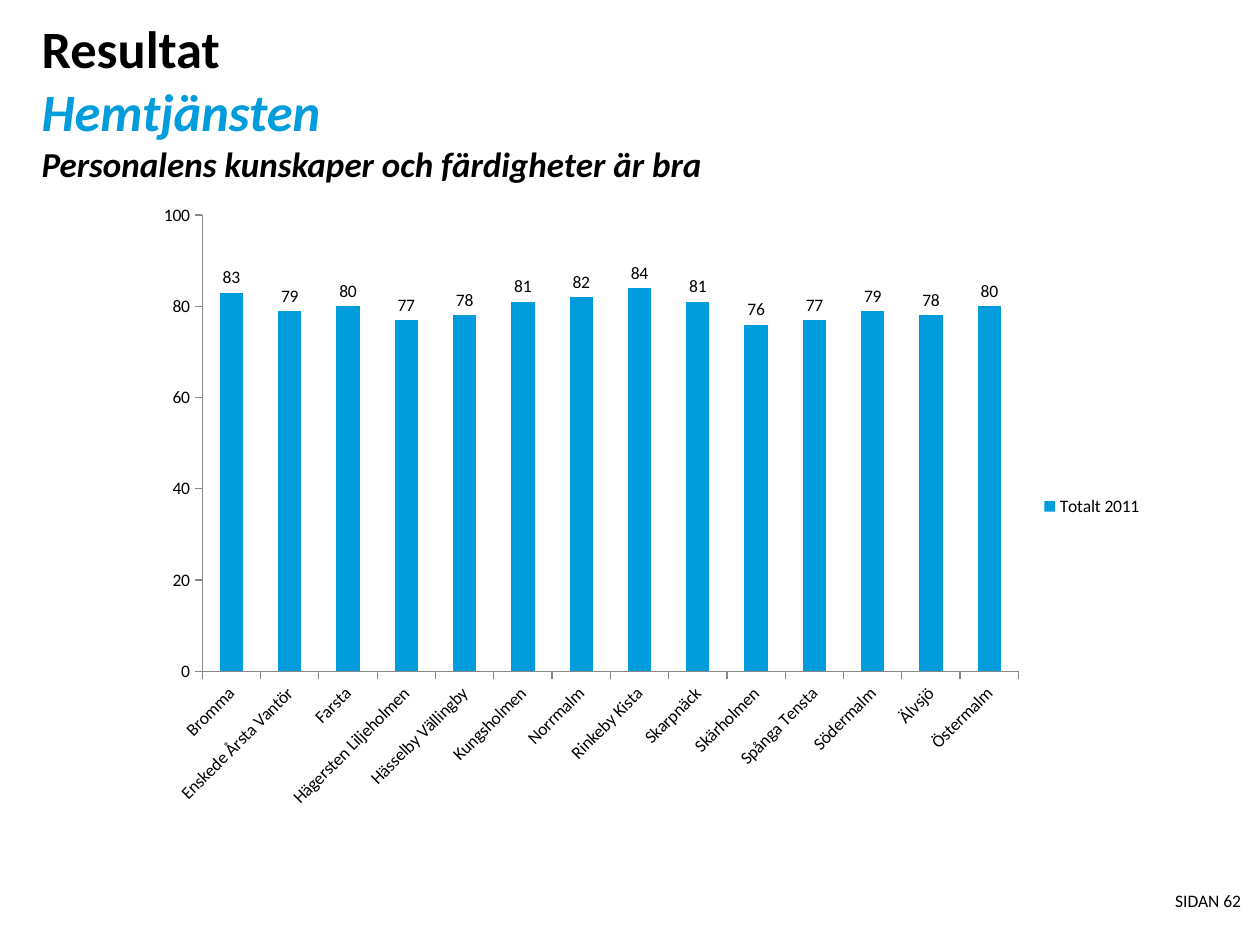
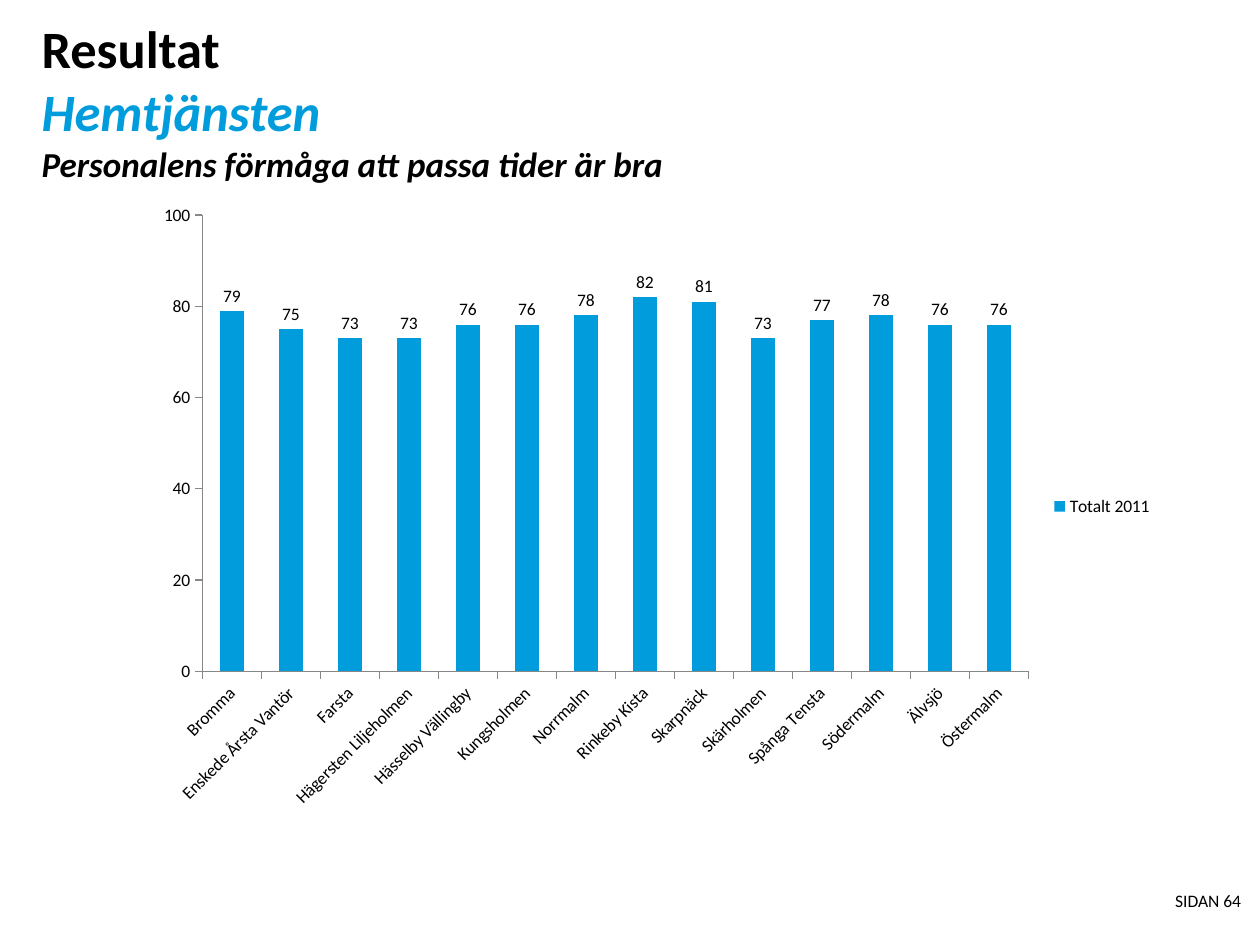
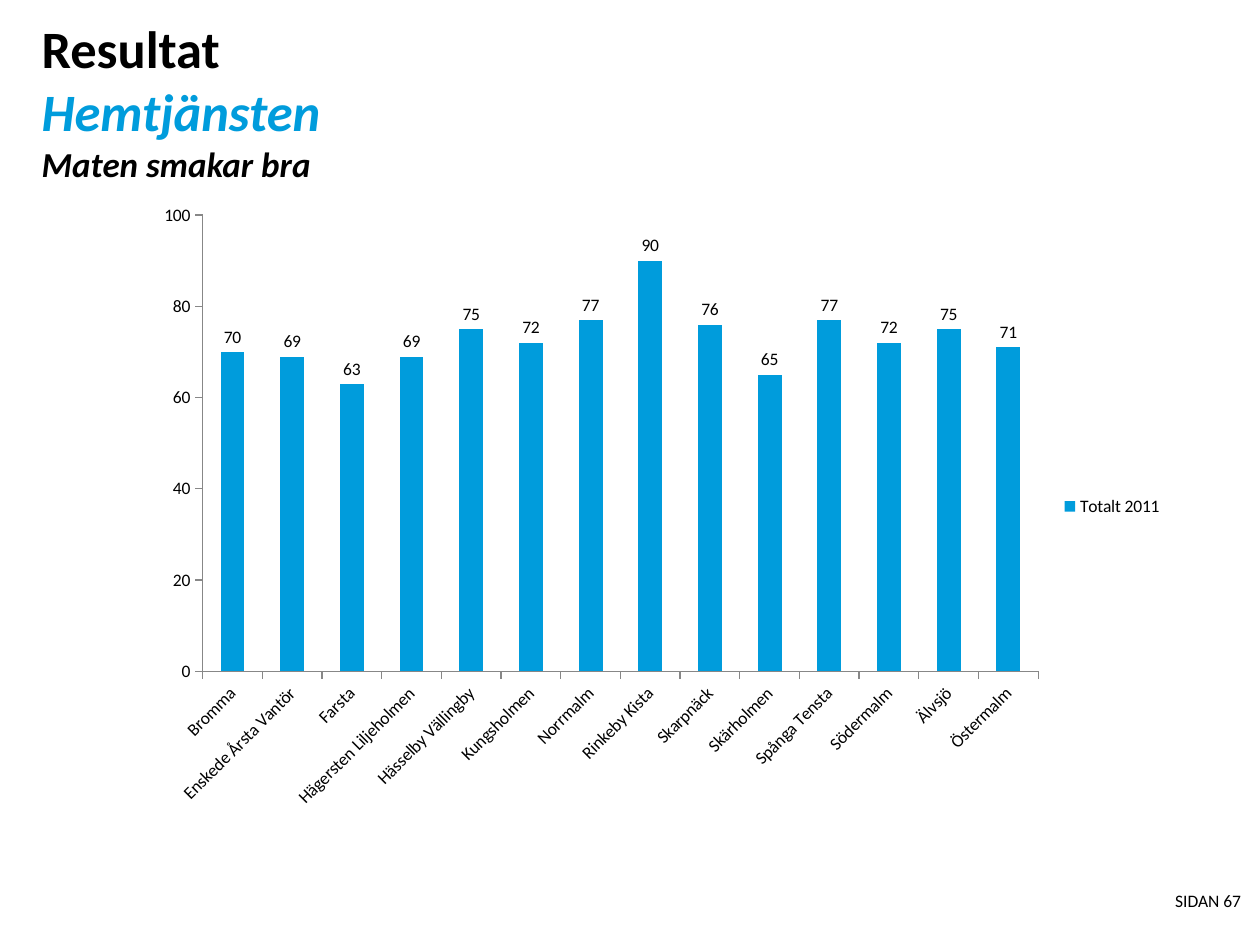
import pptx
import pptx.util
import pptx.chart.data
import pptx.dml.color
import pptx.enum.chart
import pptx.enum.text

WIDE, HIGH = 10, 7.5
FONT = "Calibri"
BLACK, BLUE, GREY = "000000", "009CDC", "878787"

# Boxes as shares of the slide: left, top, width, height
HEAD = (0.033, 0.0173, 0.925, 0.1253)
FOOT = (0.669, 0.9413, 0.316, 0.0293)
PLOT = (0.114, 0.204, 0.803, 0.664)
STEP = 0.008  # each chart is this much wider than the one before

AREAS = ["Bromma", "Enskede Årsta Vantör", "Farsta", "Hägersten Liljeholmen",
         "Hässelby Vällingby", "Kungsholmen", "Norrmalm", "Rinkeby Kista",
         "Skarpnäck", "Skärholmen", "Spånga Tensta", "Södermalm", "Älvsjö",
         "Östermalm"]

# Page number, question, score per area
PAGES = [
    (62, "Personalens kunskaper och färdigheter är bra",
     [83, 79, 80, 77, 78, 81, 82, 84, 81, 76, 77, 79, 78, 80]),
    (64, "Personalens förmåga att passa tider är bra",
     [79, 75, 73, 73, 76, 76, 78, 82, 81, 73, 77, 78, 76, 76]),
    (67, "Maten smakar bra",
     [70, 69, 63, 69, 75, 72, 77, 90, 76, 65, 77, 72, 75, 71]),
]


def paint(hue):
    return pptx.dml.color.RGBColor.from_string(hue)


def place(box):
    sides = (WIDE, HIGH, WIDE, HIGH)
    return [pptx.util.Inches(share * side) for share, side in zip(box, sides)]


def style(font, size=10, hue=BLACK, bold=False, slant=False):
    font.name, font.size = FONT, pptx.util.Pt(size)
    font.bold, font.italic = bold, slant
    font.color.rgb = paint(hue)


def write(para, text, **form):
    run = para.add_run()
    run.text = text
    style(run.font, **form)


def frame(shape, align):
    """Clear the margins of a text shape and return its first paragraph."""
    body = shape.text_frame
    body.word_wrap = True
    body.auto_size = pptx.enum.text.MSO_AUTO_SIZE.NONE
    body.vertical_anchor = pptx.enum.text.MSO_ANCHOR.TOP
    body.margin_left = body.margin_right = 0
    body.margin_top = body.margin_bottom = 0
    para = body.paragraphs[0]
    para.alignment = align
    return para


def add_head(slide, box, topic):
    title = slide.shapes.title
    title.left, title.top, title.width, title.height = place(box)
    para = frame(title, pptx.enum.text.PP_ALIGN.LEFT)
    write(para, "Resultat", size=30, bold=True)
    para.add_line_break()
    write(para, "Hemtjänsten", size=30, hue=BLUE, bold=True, slant=True)
    para.add_line_break()
    write(para, topic, size=20, bold=True, slant=True)


def add_foot(slide, box, page):
    para = frame(slide.shapes.add_textbox(*place(box)),
                 pptx.enum.text.PP_ALIGN.RIGHT)
    write(para, f"SIDAN {page}")


def add_plot(slide, box, marks):
    kinds = pptx.enum.chart
    data = pptx.chart.data.CategoryChartData(number_format="0")
    data.categories = AREAS
    data.add_series("Totalt 2011", marks)
    chart = slide.shapes.add_chart(
        kinds.XL_CHART_TYPE.COLUMN_CLUSTERED, *place(box), data).chart
    style(chart.font)
    chart.has_title = False

    # Legend
    chart.has_legend = True
    chart.legend.position = kinds.XL_LEGEND_POSITION.RIGHT
    chart.legend.include_in_layout = False
    style(chart.legend.font)

    # Axes
    for axis in (chart.category_axis, chart.value_axis):
        axis.has_major_gridlines = False
        axis.major_tick_mark = kinds.XL_TICK_MARK.OUTSIDE
        axis.minor_tick_mark = kinds.XL_TICK_MARK.NONE
        axis.format.line.color.rgb = paint(GREY)
        axis.format.line.width = pptx.util.Pt(0.75)
        style(axis.tick_labels.font)
    scale = chart.value_axis
    scale.minimum_scale, scale.maximum_scale, scale.major_unit = 0, 100, 20

    # Slant the area names
    turn = chart.category_axis._element.txPr.bodyPr
    turn.set("rot", str(-45 * 60000))
    turn.set("vert", "horz")

    # Bars and their values
    bars = chart.plots[0]
    bars.gap_width = 150
    bars.vary_by_categories = False
    fill = bars.series[0].format.fill
    fill.solid()
    fill.fore_color.rgb = paint(BLUE)
    bars.has_data_labels = True
    tags = bars.data_labels
    tags.show_value = True
    tags.position = kinds.XL_LABEL_POSITION.OUTSIDE_END
    style(tags.font)


def main():
    deck = pptx.Presentation()
    deck.slide_width = pptx.util.Inches(WIDE)
    deck.slide_height = pptx.util.Inches(HIGH)
    left, top, width, height = PLOT
    for index, (page, topic, marks) in enumerate(PAGES):
        slide = deck.slides.add_slide(deck.slide_layouts[5])
        add_head(slide, HEAD, topic)
        add_plot(slide, (left, top, width + index * STEP, height), marks)
        add_foot(slide, FOOT, page)
    deck.save("out.pptx")


if __name__ == "__main__":
    main()
